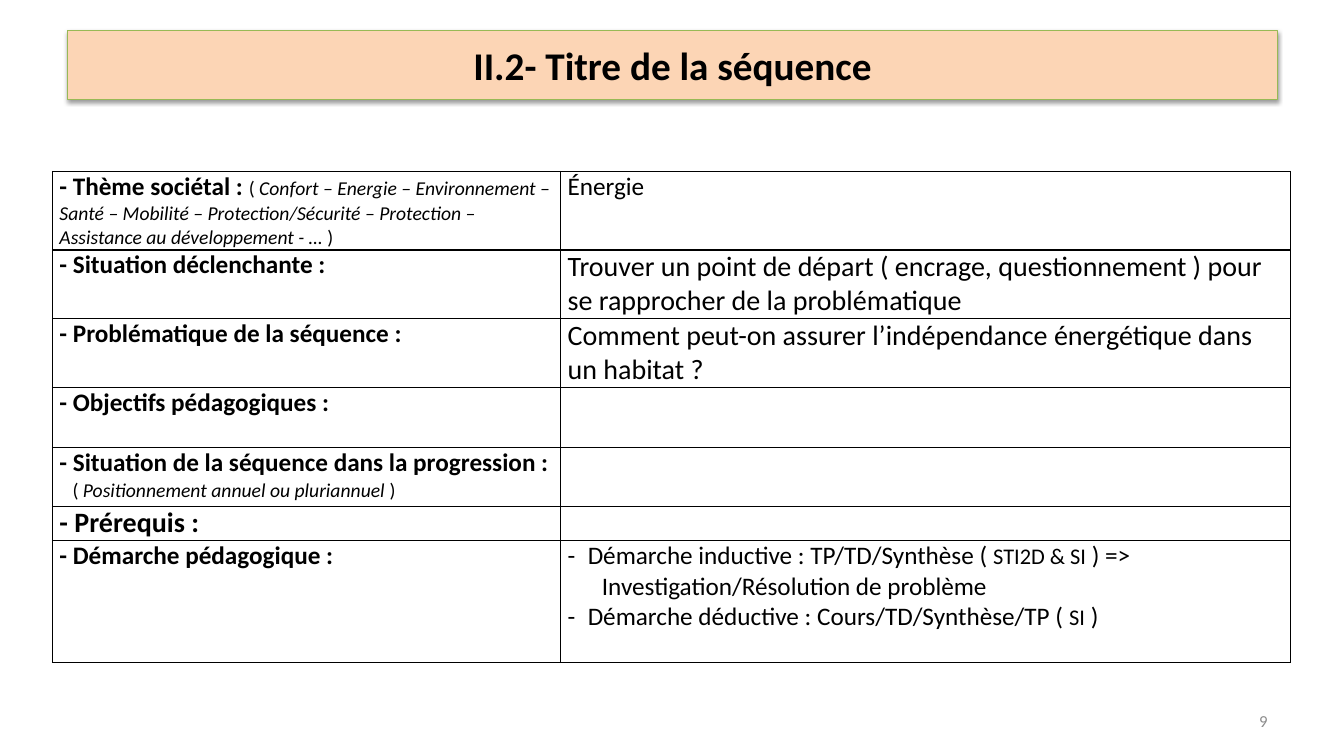
from lxml import etree
from pptx import Presentation, util as u
from pptx.dml.color import RGBColor
from pptx.enum import shapes, text
from pptx.oxml import ns

TITLE = "II.2- Titre de la séquence"
PAGE = "9"
BLACK, PEACH, GREEN, GREY = "000000", "FCD5B5", "98B955", "8C8C8C"
PLAIN, BOLD, ITALIC = "", "b", "i"
COLUMNS = [5.04, 7.24]
HEIGHTS = [0.78, 0.67, 0.67, 0.6, 0.58, 0.34, 1.21]
# Each cell is a list of paragraphs: (left indent, bullet, space before, runs).


def line(*runs, indent=0, bullet="", before=0):
    return indent, bullet, before, runs


ROWS = [
    ([line(("- Thème sociétal : ", 18, BOLD), ("(", 14, PLAIN),
           (" Confort – Energie – Environnement – Santé – Mobilité – Protection/Sécurité"
            " – Protection – Assistance au développement - … ", 14, ITALIC),
           (")", 14, PLAIN), before=6)],
     [line(("Énergie", 18, PLAIN))]),
    ([line(("- Situation déclenchante :", 18, BOLD))],
     [line(("Trouver un point de départ ( encrage, questionnement ) pour se rapprocher"
            " de la problématique", 20, PLAIN))]),
    ([line(("- Problématique de la séquence :", 18, BOLD))],
     [line(("Comment peut-on assurer l’indépendance énergétique dans un habitat ?",
            20, PLAIN))]),
    ([line(("- Objectifs pédagogiques :", 18, BOLD))], []),
    ([line(("- Situation de la séquence dans la progression :", 18, BOLD)),
      line(("(", 14, PLAIN), (" Positionnement annuel ou pluriannuel ", 14, ITALIC),
           (")", 14, PLAIN), indent=0.13)], []),
    ([line(("- Prérequis :", 20, BOLD))], []),
    ([line(("- Démarche pédagogique :", 18, BOLD))],
     [line(("Démarche inductive : TP/TD/Synthèse ( ", 18, PLAIN),
           ("STI2D & SI", 16, PLAIN), (" ) =>", 18, PLAIN), indent=0.2, bullet="-"),
      line(("Investigation/Résolution de problème", 18, PLAIN), indent=0.34),
      line(("Démarche déductive : Cours/TD/Synthèse/TP ( ", 18, PLAIN),
           ("SI", 16, PLAIN), (" )", 18, PLAIN), indent=0.2, bullet="-")]),
]


def rgb(code):
    return RGBColor.from_string(code)


def box(left, top, width, height):
    return [u.Inches(n) for n in (left, top, width, height)]


def sub(parent, tag, **attributes):
    return etree.SubElement(parent, ns.qn("a:" + tag), attributes)


def add_run(paragraph, words, size, style=PLAIN, color=BLACK):
    run = paragraph.add_run()
    run.text = words
    font = run.font
    font.name, font.size = "Calibri", u.Pt(size)
    font.bold, font.italic = style == BOLD, style == ITALIC
    font.color.rgb = rgb(color)


def add_title(slide):
    banner = slide.shapes.add_shape(shapes.MSO_SHAPE.RECTANGLE, *box(0.67, 0.3, 12, 0.69))
    banner.fill.solid()
    banner.fill.fore_color.rgb = rgb(PEACH)
    banner.line.color.rgb = rgb(GREEN)
    banner.line.width = u.Pt(0.75)
    banner.shadow.inherit = False
    effects = banner._element.spPr.find(ns.qn("a:effectLst"))
    shadow = sub(effects, "outerShdw", blurRad=str(u.Pt(3.1)), dist=str(u.Pt(1.6)),
                 dir="5400000", rotWithShape="0")
    sub(sub(shadow, "srgbClr", val=BLACK), "alpha", val="38000")
    banner.text_frame.vertical_anchor = text.MSO_ANCHOR.MIDDLE
    paragraph = banner.text_frame.paragraphs[0]
    paragraph.alignment = text.PP_ALIGN.CENTER
    add_run(paragraph, TITLE, 28, BOLD)


def fill_cell(cell, lines):
    cell.margin_left = cell.margin_right = u.Inches(0.07)
    cell.margin_top = cell.margin_bottom = 0
    frame = cell.text_frame
    for number, (indent, bullet, before, runs) in enumerate(lines):
        paragraph = frame.add_paragraph() if number else frame.paragraphs[0]
        properties = paragraph._p.get_or_add_pPr()
        properties.set("marL", str(u.Inches(indent)))
        if before:
            paragraph.space_before = u.Pt(before)
        if bullet:
            properties.set("indent", str(-u.Inches(indent)))
            sub(properties, "buFont", typeface="Calibri")
            sub(properties, "buChar", char=bullet)
        for run in runs:
            add_run(paragraph, *run)
    borders = cell._tc.get_or_add_tcPr()
    for side in ("lnL", "lnR", "lnT", "lnB"):
        border = sub(borders, side, w=str(u.Pt(1)))
        sub(sub(border, "solidFill"), "srgbClr", val=BLACK)
    cell.fill.background()


def add_sequence(slide):
    area = box(0.52, 1.7, sum(COLUMNS), sum(HEIGHTS))
    table = slide.shapes.add_table(len(ROWS), len(COLUMNS), *area).table
    table.first_row = table.horz_banding = False
    for column, width in zip(table.columns, COLUMNS):
        column.width = u.Inches(width)
    for row, height, contents in zip(table.rows, HEIGHTS, ROWS):
        row.height = u.Inches(height)
        for cell, lines in zip(row.cells, contents):
            fill_cell(cell, lines)


def add_page_number(slide):
    frame = slide.shapes.add_textbox(*box(9.56, 6.95, 3.11, 0.4)).text_frame
    frame.word_wrap = True
    frame.vertical_anchor = text.MSO_ANCHOR.MIDDLE
    frame.paragraphs[0].alignment = text.PP_ALIGN.RIGHT
    add_run(frame.paragraphs[0], PAGE, 12, color=GREY)


def main():
    """Build the slide that describes a teaching sequence."""
    deck = Presentation()
    deck.slide_width, deck.slide_height = u.Inches(13.33), u.Inches(7.5)
    slide = deck.slides.add_slide(deck.slide_layouts[6])
    add_title(slide)
    add_sequence(slide)
    add_page_number(slide)
    deck.save("out.pptx")


if __name__ == "__main__":
    main()
